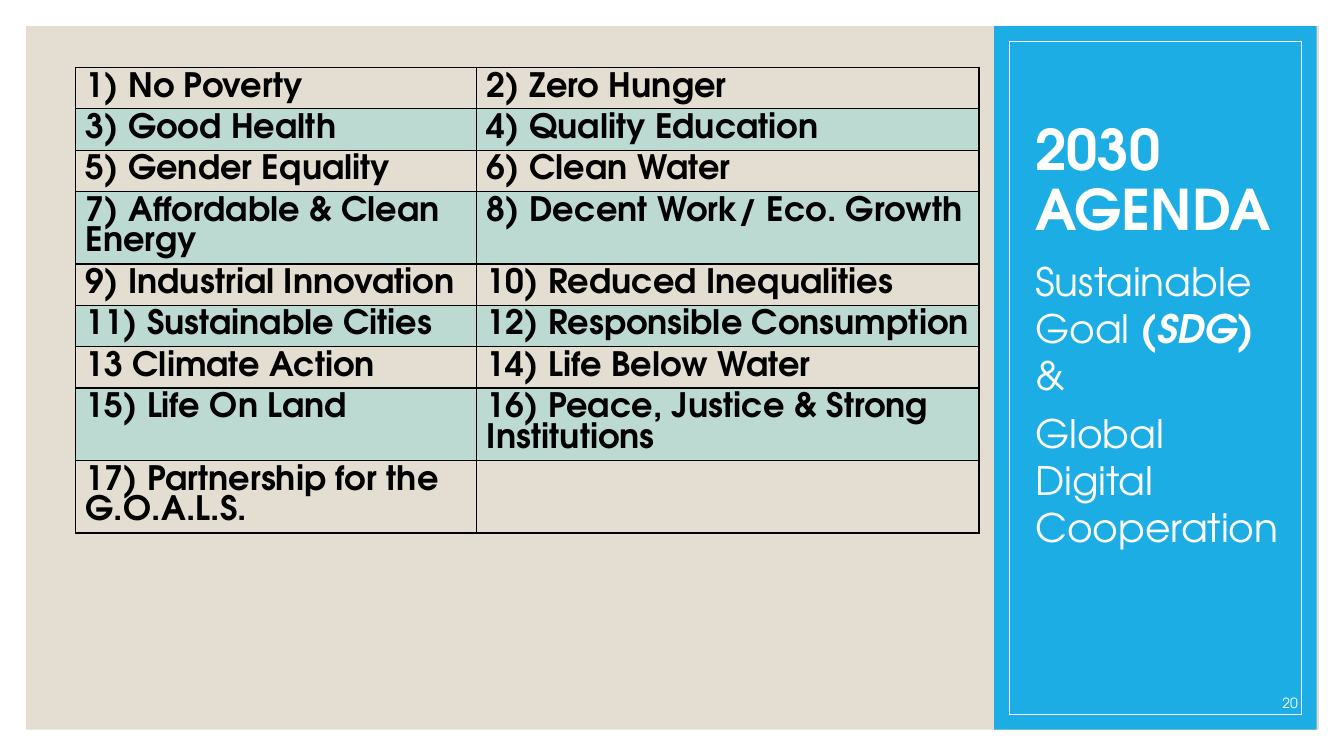
from pptx import Presentation
from pptx.dml.color import RGBColor
from pptx.enum.shapes import MSO_SHAPE
from pptx.enum.text import MSO_ANCHOR, PP_ALIGN
from pptx.oxml import parse_xml
from pptx.oxml.ns import nsdecls, qn
from pptx.util import Inches, Pt
from lxml.etree import SubElement

FONT = "TeX Gyre Adventor"
WHITE, BLACK, SAND, BLUE, TEAL = "FFFFFF", "000000", "E3DED1", "1CADE4", "27CED7"
GOALS = [
    ("1) No Poverty", "2) Zero Hunger"),
    ("3) Good Health", "4) Quality Education"),
    ("5) Gender Equality", "6) Clean Water"),
    ("7) Affordable & Clean Energy", "8) Decent Work/ Eco. Growth"),
    ("9) Industrial Innovation", "10) Reduced Inequalities"),
    ("11) Sustainable Cities", "12) Responsible Consumption"),
    ("13 Climate Action", "14) Life Below Water"),
    ("15) Life On Land", "16) Peace, Justice & Strong Institutions"),
    ("17) Partnership for the G.O.A.L.S.", ""),
]
TALL = (3, 7, 8)  # rows whose text takes two lines


def color(code):
    return RGBColor.from_string(code)


def style(run, size, code, bold=False, italic=False):
    font = run.font
    font.name, font.size = FONT, Pt(size)
    font.bold, font.italic = bold, italic
    font.color.rgb = color(code)


def add_panel(slide, box, fill=None, line=None):
    panel = slide.shapes.add_shape(MSO_SHAPE.RECTANGLE, *map(Inches, box))
    panel.shadow.inherit = False
    if fill:
        panel.fill.solid()
        panel.fill.fore_color.rgb = color(fill)
    else:
        panel.fill.background()
    if line:
        panel.line.color.rgb = color(line)
        panel.line.width = Pt(0.5)
    else:
        panel.line.fill.background()


def add_text(slide, box, paras, size, anchor=MSO_ANCHOR.TOP,
             align=PP_ALIGN.LEFT, before=0, spacing=1.0):
    """Each paragraph is a list of (text, bold, italic) parts."""
    frame = slide.shapes.add_textbox(*map(Inches, box)).text_frame
    frame.word_wrap = True
    frame.vertical_anchor = anchor
    for i, parts in enumerate(paras):
        para = frame.add_paragraph() if i else frame.paragraphs[0]
        para.alignment = align
        para.space_before = Pt(before)
        para.line_spacing = spacing
        for text, bold, italic in parts:
            run = para.add_run()
            run.text = text
            style(run, size, WHITE, bold, italic)


def set_cell(cell, text, band):
    cell.text_frame.text = text
    para = cell.text_frame.paragraphs[0]
    para.line_spacing = Pt(22)
    para.font.size = Pt(24)
    for run in para.runs:
        style(run, 24, BLACK, bold=True)
    # Borders come before the fill in the cell properties
    props = cell._tc.get_or_add_tcPr()
    for side in ("lnL", "lnR", "lnT", "lnB"):
        props.append(parse_xml(
            f'<a:{side} {nsdecls("a")} w="12700"><a:solidFill>'
            f'<a:srgbClr val="{BLACK}"/></a:solidFill></a:{side}>'))
    if band:
        cell.fill.solid()
        cell.fill.fore_color.rgb = color(TEAL)
        tint = props.find(qn("a:solidFill"))[0]
        SubElement(tint, qn("a:alpha")).set("val", "20000")
    else:
        cell.fill.background()


def add_goals(slide):
    box = map(Inches, (0.75, 0.67, 8.96, 4.62))
    table = slide.shapes.add_table(len(GOALS), 2, *box).table
    table.first_row = table.horz_banding = False
    for col, width in zip(table.columns, (3.98, 4.98)):
        col.width = Inches(width)
    for i, goals in enumerate(GOALS):
        table.rows[i].height = Inches(0.72 if i in TALL else 0.41)
        for j, goal in enumerate(goals):
            set_cell(table.cell(i, j), goal, band=i % 2)


def main():
    deck = Presentation()
    deck.slide_width, deck.slide_height = Inches(13.33), Inches(7.5)
    slide = deck.slides.add_slide(deck.slide_layouts[6])

    # Background panels
    add_panel(slide, (0.26, 0.26, 12.82, 6.98), SAND)
    add_panel(slide, (9.86, 0.26, 3.2, 6.98), BLUE)
    add_panel(slide, (10.01, 0.41, 2.9, 6.68), line=WHITE)

    # Goals
    add_goals(slide)

    # Side panel text
    add_text(slide, (10.17, 0.66, 2.66, 1.8), [[("2030 AGENDA", True, False)]],
             40, MSO_ANCHOR.BOTTOM, spacing=0.9)
    add_text(slide, (10.17, 2.5, 2.66, 4.31),
             [[("Sustainable Goal ", False, False), ("(SDG) ", True, True),
               ("&", False, False)],
              [("Global Digital Cooperation", False, False)]], 28, before=8)
    add_text(slide, (11.37, 6.81, 1.6, 0.3), [[("20", False, False)]],
             10, MSO_ANCHOR.BOTTOM, PP_ALIGN.RIGHT)
    deck.save("out.pptx")


if __name__ == "__main__":
    main()
